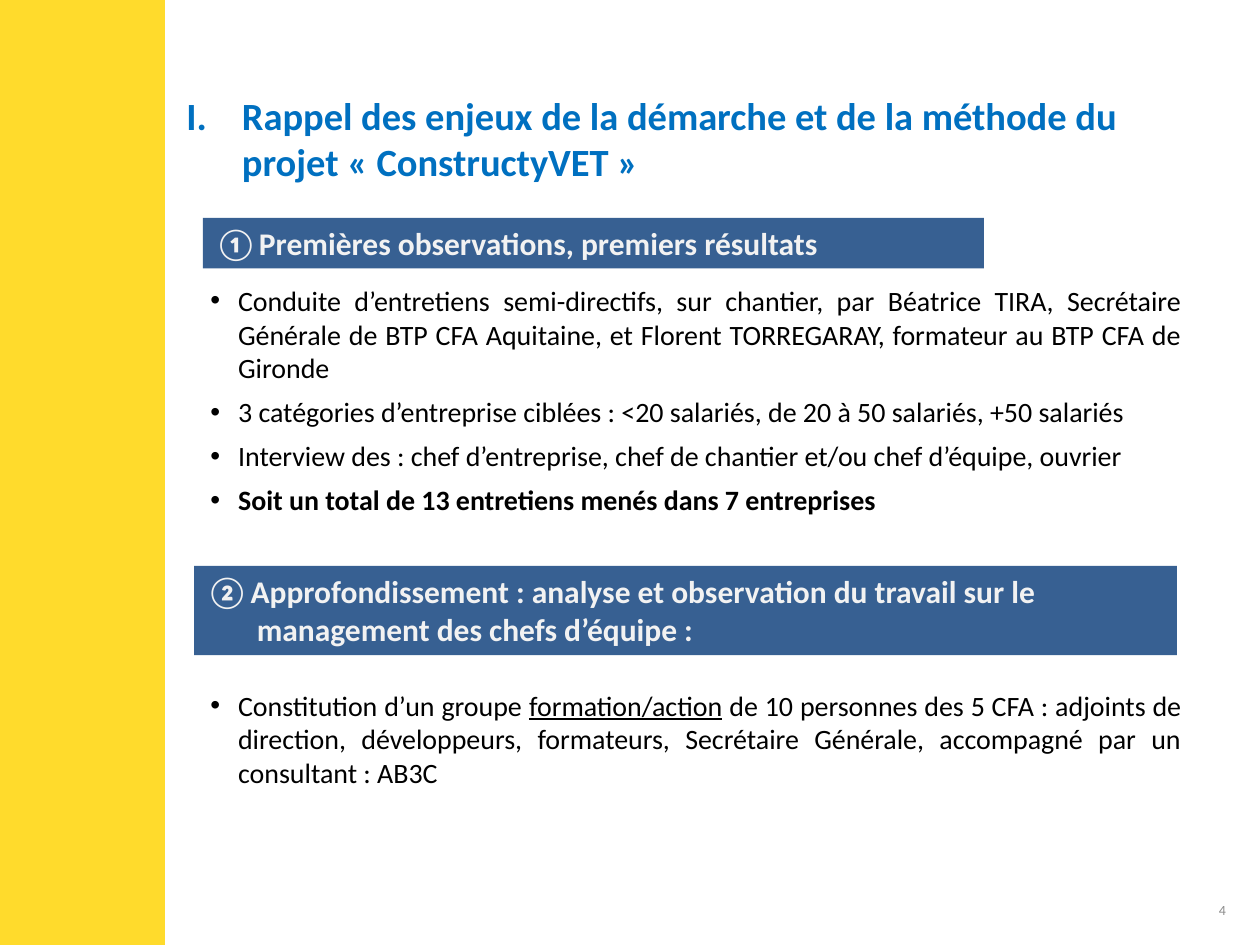
from lxml.etree import SubElement
from pptx import Presentation
from pptx.dml.color import RGBColor
from pptx.enum.shapes import MSO_SHAPE as Shape
from pptx.enum.text import MSO_ANCHOR as Anchor, MSO_AUTO_SIZE as AutoSize, PP_ALIGN as Align
from pptx.oxml.ns import qn
from pptx.util import Inches, Pt

YELLOW = RGBColor(0xFF, 0xDB, 0x2C)
TITLE_BLUE = RGBColor(0x00, 0x70, 0xC0)
BANNER_BLUE = RGBColor(0x37, 0x60, 0x92)
PALE = RGBColor(0xF2, 0xF2, 0xF2)
BLACK = RGBColor(0x00, 0x00, 0x00)
GREY = RGBColor(0x8C, 0x8C, 0x8C)

# Each bullet: space before in points, then its runs as (text, style)
BULLETS = [
    (0, [("Conduite d’entretiens semi-directifs, sur chantier, par Béatrice TIRA, "
          "Secrétaire Générale de BTP CFA Aquitaine, et Florent TORREGARAY, "
          "formateur au BTP CFA de Gironde", {})]),
    (6, [("3 catégories d’entreprise ciblées : <20 salariés, de 20 à 50 salariés, "
          "+50 salariés", {})]),
    (6, [("Interview des : chef d’entreprise, chef de chantier et/ou chef d’équipe, "
          "ouvrier", {})]),
    (6, [("Soit un total de 13 entretiens menés dans 7 entreprises", {"bold": True})]),
    (98, [("Constitution d’un groupe ", {}),
          ("formation/action", {"underline": True}),
          (" de 10 personnes des 5 CFA : adjoints de direction, développeurs, "
           "formateurs, Secrétaire Générale, accompagné par un consultant : AB3C", {})]),
]


class SlideBuilder:
    def __init__(self, slide, font="Calibri"):
        self.slide = slide
        self.font = font

    def place(self, shape, left, top, width, height):
        shape.left, shape.top = Inches(left), Inches(top)
        shape.width, shape.height = Inches(width), Inches(height)

    def style(self, font, size, color, bold=False, underline=False):
        font.name, font.size, font.bold = self.font, Pt(size), bold
        font.underline = underline
        font.color.rgb = color

    def run(self, paragraph, text, size, color, **emphasis):
        run = paragraph.add_run()
        run.text = text
        self.style(run.font, size, color, **emphasis)

    def hang(self, paragraph, left, hanging):
        """Indent the paragraph, with its first line pulled back by hanging."""
        properties = paragraph._p.get_or_add_pPr()
        properties.set("marL", str(Inches(left)))
        properties.set("indent", str(-Inches(hanging)))
        return properties

    def frame(self, shape, anchor=Anchor.TOP):
        text_frame = shape.text_frame
        text_frame.word_wrap = True
        text_frame.auto_size = AutoSize.NONE
        text_frame.vertical_anchor = anchor
        return text_frame

    def rectangle(self, box, fill):
        rectangle = self.slide.shapes.add_shape(Shape.RECTANGLE, *map(Inches, box))
        rectangle.shadow.inherit = False
        rectangle.fill.solid()
        rectangle.fill.fore_color.rgb = fill
        rectangle.line.fill.background()
        return rectangle

    def side_band(self, box):
        band = self.rectangle(box, YELLOW)
        band.line.color.rgb = YELLOW
        band.line.width = Pt(2)

    def title(self, box, text):
        title = self.slide.shapes.title
        self.place(title, *box)
        heading = self.frame(title).paragraphs[0]
        properties = self.hang(heading, 0.44, 0.44)
        SubElement(properties, qn("a:buFont"), typeface="+mj-lt")
        SubElement(properties, qn("a:buAutoNum"), type="romanUcPeriod")
        heading.alignment = Align.LEFT
        self.run(heading, text, 22, TITLE_BLUE, bold=True)

    def bullet_list(self, box, bullets, margin_top):
        body = self.slide.placeholders[1]
        self.place(body, *box)
        text_frame = self.frame(body)
        text_frame.margin_top = Inches(margin_top)
        for index, (space, runs) in enumerate(bullets):
            item = text_frame.add_paragraph() if index else text_frame.paragraphs[0]
            self.hang(item, 0.31, 0.22)
            item.alignment = Align.JUSTIFY
            item.space_before = Pt(space)
            for text, emphasis in runs:
                self.run(item, text, 16, BLACK, **emphasis)

    def banner(self, box, number, gap_size, text, hanging=0):
        heading = self.frame(self.rectangle(box, BANNER_BLUE)).paragraphs[0]
        self.hang(heading, hanging, hanging)
        heading.alignment = Align.LEFT
        for wording, size in ((number, 18), (" ", gap_size), (text, 18)):
            self.run(heading, wording, size, PALE, bold=True)

    def slide_number(self, box, number):
        footer = self.slide.shapes.add_textbox(*map(Inches, box))
        paragraph = self.frame(footer, Anchor.MIDDLE).paragraphs[0]
        paragraph.alignment = Align.RIGHT
        self.run(paragraph, number, 8, GREY)
        # Turn the run into a live slide-number field
        run = paragraph.runs[0]._r
        field = SubElement(paragraph._p, qn("a:fld"), type="slidenum",
                           id="{B6F15528-21DE-4FAA-801E-634DDDAF4B2B}")
        field.extend(list(run))
        paragraph._p.remove(run)


def main():
    deck = Presentation()
    deck.slide_width, deck.slide_height = Inches(10), Inches(7.5)
    # Start numbering at 4, the page this slide carries
    deck.element.set("firstSlideNum", "4")
    builder = SlideBuilder(deck.slides.add_slide(deck.slide_layouts[1]))

    builder.side_band((0, 0, 1.3, 7.5))
    builder.slide_number((9.03, 7.02, 0.8, 0.4), "4")
    builder.title((1.38, 0.68, 8.27, 0.84),
                  "Rappel des enjeux de la démarche et de la méthode du projet "
                  "« ConstructyVET »")
    builder.bullet_list((1.48, 1.81, 8, 5.25), BULLETS, margin_top=0.44)
    builder.banner((1.61, 1.73, 6.2, 0.4), "①", 5,
                   "Premières observations, premiers résultats")
    builder.banner((1.54, 4.49, 7.8, 0.71), "②", 6,
                   "Approfondissement : analyse et observation du travail sur le "
                   "management des chefs d’équipe :", hanging=0.4)
    deck.save("out.pptx")


if __name__ == "__main__":
    main()
